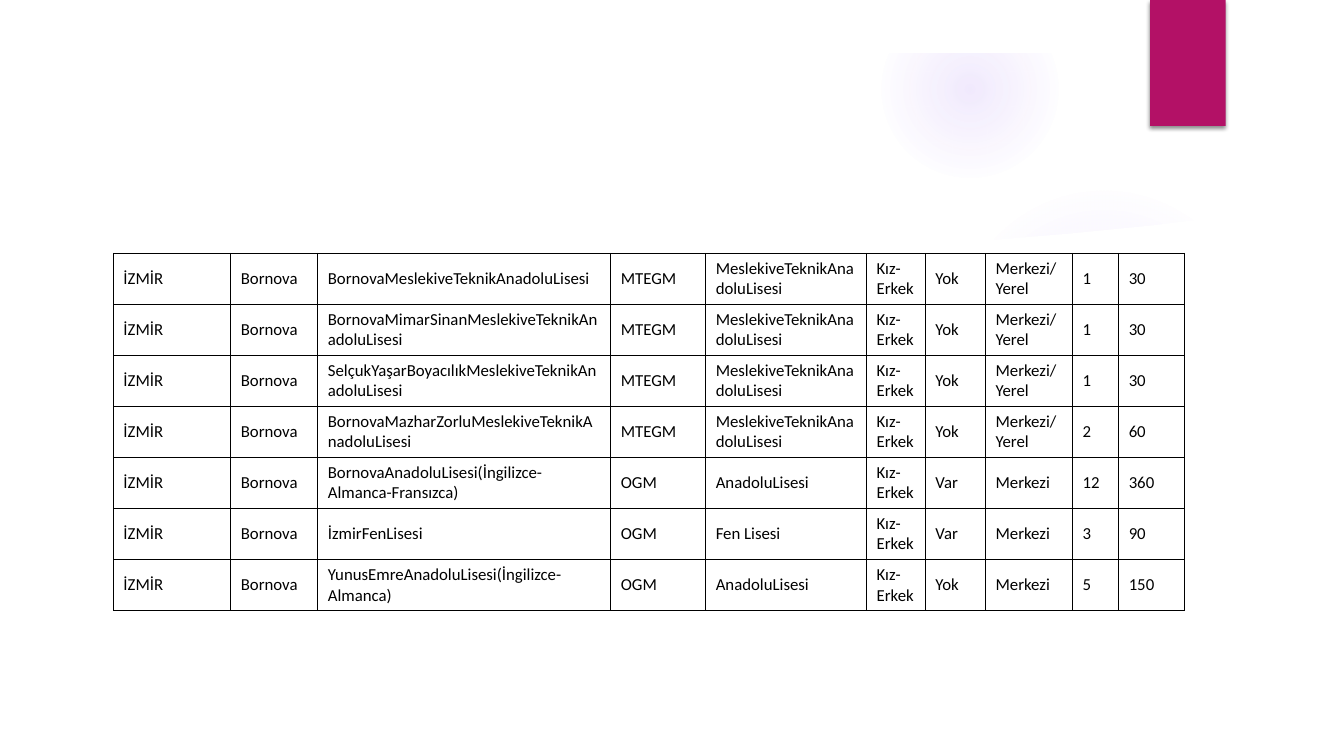
import dataclasses
import pptx
import pptx.dml.color
import pptx.enum.shapes
import pptx.enum.text
import pptx.oxml
import pptx.oxml.ns
import pptx.util

Pt = pptx.util.Pt
KIND = pptx.enum.shapes.MSO_SHAPE
NS = pptx.oxml.ns.nsdecls("a")
HUES = {"white": "FFFFFF", "black": "000000", "tab": "B31166", "glow": "9B6BF2"}
WIDE, HIGH = 960, 540


@dataclasses.dataclass
class Glow:
    left: float
    top: float
    size: float
    stops: tuple[tuple[int, int], ...]


@dataclasses.dataclass
class School:
    name: str
    unit: str
    kind: str
    board: str
    entry: str
    group: int
    quota: int

    def cells(self) -> list[str]:
        return ["İZMİR", "Bornova", self.name, self.unit, self.kind, "Kız-Erkek",
                self.board, self.entry, str(self.group), str(self.quota)]


GLOWS = [
    Glow(677.5, 131.8, 221.8, ((0, 7), (36, 6), (69, 0))),
    Glow(630, 0.7, 126, ((0, 14), (36, 7), (73, 0))),
]
PANEL = [
    (36, 147), (57, 149.5), (97, 153), (157, 157), (231, 161), (316, 174 - 10),
    (385, 175.4), (454, 178.4), (510, 178.5), (585, 177.1), (644, 175.6),
    (703, 172), (763, 167), (824, 161), (884, 153.4), (924.5, 147),
    (924.5, 504), (36, 504),
]
TRADE = "MeslekiveTeknikAnadoluLisesi"
HIGHER = "AnadoluLisesi"
LOCAL = "Merkezi/Yerel"
STATE = "Merkezi"
SCHOOLS = [
    School("Bornova" + TRADE, "MTEGM", TRADE, "Yok", LOCAL, 1, 30),
    School("BornovaMimarSinan" + TRADE, "MTEGM", TRADE, "Yok", LOCAL, 1, 30),
    School("SelçukYaşarBoyacılık" + TRADE, "MTEGM", TRADE, "Yok", LOCAL, 1, 30),
    School("BornovaMazharZorlu" + TRADE, "MTEGM", TRADE, "Yok", LOCAL, 2, 60),
    School("BornovaAnadoluLisesi(İngilizce-Almanca-Fransızca)", "OGM", HIGHER,
           "Var", STATE, 12, 360),
    School("İzmirFenLisesi", "OGM", "Fen Lisesi", "Var", STATE, 3, 90),
    School("YunusEmreAnadoluLisesi(İngilizce-Almanca)", "OGM", HIGHER,
           "Yok", STATE, 5, 150),
]
WIDTHS = [83.8, 62.2, 209.3, 67.8, 115, 42, 43, 62.1, 33, 47]
ROW = 36.4


def shade(fill, hue: str) -> None:
    fill.solid()
    fill.fore_color.rgb = pptx.dml.color.RGBColor.from_string(HUES[hue])


def block(slide, kind, left: float, top: float, wide: float, high: float, hue: str):
    shape = slide.shapes.add_shape(kind, Pt(left), Pt(top), Pt(wide), Pt(high))
    shape.shadow.inherit = False
    shape.line.fill.background()
    shade(shape.fill, hue)
    return shape


def draw_glow(slide, glow: Glow) -> None:
    shape = block(slide, KIND.OVAL, glow.left, glow.top, glow.size, glow.size, "glow")
    stops = "".join(
        f'<a:gs pos="{pos * 1000}"><a:srgbClr val="{HUES["glow"]}">'
        f'<a:alpha val="{alpha * 1000}"/></a:srgbClr></a:gs>'
        for pos, alpha in glow.stops)
    grad = pptx.oxml.parse_xml(
        f'<a:gradFill {NS}><a:gsLst>{stops}</a:gsLst><a:path path="circle">'
        '<a:fillToRect l="50000" t="50000" r="50000" b="50000"/></a:path></a:gradFill>')
    props = shape._element.spPr
    props.replace(props.find(pptx.oxml.ns.qn("a:solidFill")), grad)


def draw_panel(slide) -> None:
    points = [(Pt(x), Pt(y)) for x, y in PANEL]
    pen = slide.shapes.build_freeform(*points[0], scale=1.0)
    pen.add_line_segments(points[1:], close=True)
    panel = pen.convert_to_shape()
    panel.shadow.inherit = False
    panel.line.fill.background()
    shade(panel.fill, "white")


def draw_frame(slide) -> None:
    frame = block(slide, KIND.FRAME, 0, 0, WIDE, HIGH, "white")
    frame.adjustments[0] = 0.07


def draw_tab(slide) -> None:
    tab = block(slide, KIND.RECTANGLE, 821.5, 0, 54, 90, "tab")
    effects = tab._element.spPr.find(pptx.oxml.ns.qn("a:effectLst"))
    effects.append(pptx.oxml.parse_xml(
        f'<a:outerShdw {NS} blurRad="{Pt(3)}" dist="{Pt(2)}" dir="5400000" '
        f'rotWithShape="0"><a:srgbClr val="{HUES["black"]}">'
        '<a:alpha val="45000"/></a:srgbClr></a:outerShdw>'))


def fill_cell(cell, text: str) -> None:
    cell.text_frame.text = text
    cell.vertical_anchor = pptx.enum.text.MSO_ANCHOR.MIDDLE
    cell.fill.background()
    font = cell.text_frame.paragraphs[0].runs[0].font
    font.name = "Calibri"
    font.size = Pt(12)
    font.color.rgb = pptx.dml.color.RGBColor.from_string(HUES["black"])
    props = cell._tc.get_or_add_tcPr()
    for spot, side in enumerate("LRTB"):
        props.insert(spot, pptx.oxml.parse_xml(
            f'<a:ln{side} {NS} w="{Pt(0.5)}"><a:solidFill>'
            f'<a:srgbClr val="{HUES["black"]}"/></a:solidFill></a:ln{side}>'))


def draw_table(slide) -> None:
    table = slide.shapes.add_table(
        len(SCHOOLS), len(WIDTHS), Pt(81), Pt(180.8),
        Pt(sum(WIDTHS)), Pt(ROW * len(SCHOOLS))).table
    table.first_row = False
    table.horz_banding = False
    for column, width in zip(table.columns, WIDTHS):
        column.width = Pt(width)
    for row, school in zip(table.rows, SCHOOLS):
        row.height = Pt(ROW)
        for cell, text in zip(row.cells, school.cells()):
            fill_cell(cell, text)


def main() -> None:
    deck = pptx.Presentation()
    deck.slide_width, deck.slide_height = Pt(WIDE), Pt(HIGH)
    slide = deck.slides.add_slide(deck.slide_layouts[6])
    for glow in GLOWS:
        draw_glow(slide, glow)
    draw_panel(slide)
    draw_frame(slide)
    draw_tab(slide)
    draw_table(slide)
    deck.save("out.pptx")


if __name__ == "__main__":
    main()
